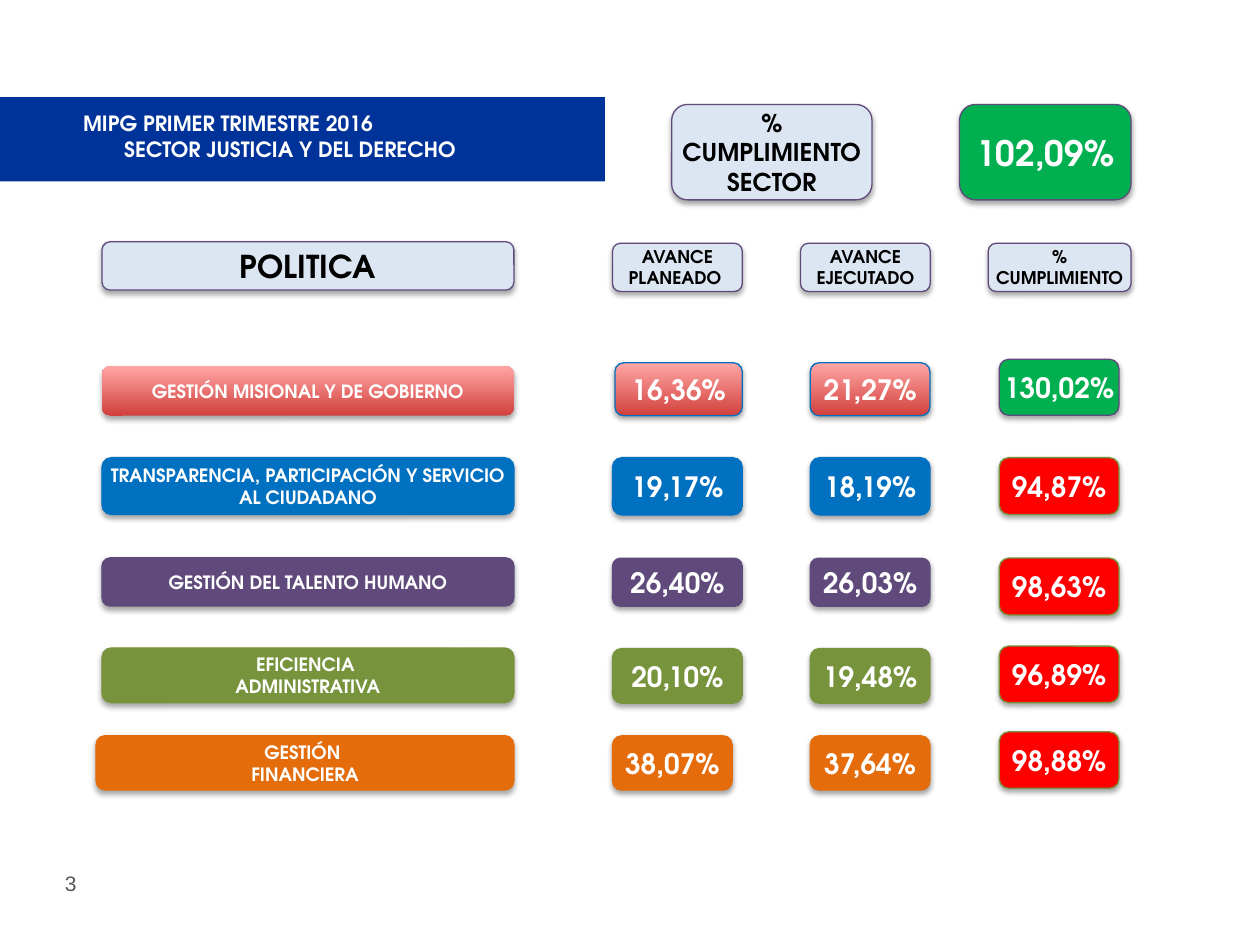
from dataclasses import dataclass
from lxml.etree import SubElement
from pptx import Presentation
from pptx.dml.color import RGBColor
from pptx.enum.shapes import MSO_SHAPE as Shape
from pptx.enum.text import MSO_ANCHOR as Anchor, PP_ALIGN as Align
from pptx.oxml.ns import qn
from pptx.util import Pt


@dataclass(frozen=True)
class Theme:
    font: str = "TeX Gyre Adventor"
    number_font: str = "Arial"
    white: str = "FFFFFF"
    black: str = "000000"
    gray: str = "595959"
    navy: str = "003399"
    pale: str = "DCE6F2"
    blue: str = "0070C0"
    purple: str = "604A7B"
    olive: str = "77933C"
    orange: str = "E46C0A"
    green: str = "00B050"
    red: str = "FF0000"
    coral: tuple = ("D1403C", "FFA6A5")
    total_size: float = 20
    heading_size: float = 18
    value_size: float = 16
    sector_size: float = 14
    title_size: float = 12
    label_size: float = 10.5
    column_size: float = 10


@dataclass(frozen=True)
class Policy:
    label: str
    fill: object
    edge: str
    label_box: tuple
    planned_box: tuple
    executed_box: tuple
    status_box: tuple
    planned: str
    executed: str
    status: str
    status_fill: str
    status_edge: str


THEME = Theme()
LABEL_LEFT, LABEL_WIDTH = 58.3, 235.4
PLANNED_LEFT, PLANNED_WIDTH = 350, 74.2
EXECUTED_LEFT, STATUS_LEFT, VALUE_WIDTH = 463, 571, 68.4


def policy_row(label, fill, edge, label_span, value_span, status_span, values,
               label_side=(LABEL_LEFT, LABEL_WIDTH),
               planned_side=(PLANNED_LEFT, PLANNED_WIDTH),
               status_colors=(THEME.red, THEME.olive)):
    def place(side, span):
        return side[0], span[0], side[1], span[1]

    return Policy(label, fill, edge,
                  place(label_side, label_span),
                  place(planned_side, value_span),
                  place((EXECUTED_LEFT, VALUE_WIDTH), value_span),
                  place((STATUS_LEFT, VALUE_WIDTH), status_span),
                  *values, *status_colors)


POLICIES = [
    policy_row("GESTIÓN MISIONAL Y DE GOBIERNO", THEME.coral, THEME.blue,
               (209.3, 28.3), (207.3, 30.3), (205.3, 32),
               ("16,36%", "21,27%", "130,02%"), planned_side=(351.4, 72.8),
               status_colors=(THEME.green, THEME.purple)),
    policy_row("TRANSPARENCIA, PARTICIPACIÓN Y SERVICIO AL CIUDADANO",
               THEME.blue, THEME.blue, (261.5, 32.5), (261.5, 32.8),
               (261.5, 32.5), ("19,17%", "18,19%", "94,87%")),
    policy_row("GESTIÓN DEL TALENTO HUMANO", THEME.purple, THEME.purple,
               (318.8, 27.5), (319, 27.5), (318.9, 32.5),
               ("26,40%", "26,03%", "98,63%")),
    policy_row("EFICIENCIA \nADMINISTRATIVA", THEME.olive, THEME.olive,
               (370.3, 31.2), (370.6, 31.2), (369.2, 32.3),
               ("20,10%", "19,48%", "96,89%")),
    policy_row("GESTIÓN \nFINANCIERA", THEME.orange, THEME.orange,
               (420.4, 31), (420.5, 31), (418.2, 32.3),
               ("38,07%", "37,64%", "98,88%"), label_side=(54.9, 238.8),
               planned_side=(PLANNED_LEFT, VALUE_WIDTH)),
]


def color(value):
    return RGBColor.from_string(value)


def style_text(frame, size, ink, align, font=THEME.font, bold=True):
    frame.word_wrap = True
    for para in frame.paragraphs:
        para.alignment = align
        for span in para.runs:
            span.font.name = font
            span.font.size = Pt(size)
            span.font.bold = bold
            span.font.color.rgb = color(ink)


def add_shadow(shape):
    shape.shadow.inherit = False
    effects = shape._element.spPr.find(qn("a:effectLst"))
    shadow = SubElement(effects, qn("a:outerShdw"), blurRad=str(Pt(3.1)),
                        dist=str(Pt(1.8)), dir="5400000", rotWithShape="0")
    tint = SubElement(shadow, qn("a:srgbClr"), val=THEME.black)
    SubElement(tint, qn("a:alpha"), val="35000")


def add_card(page, box, text, size, fill, edge=None, ink=THEME.white):
    card = page.shapes.add_shape(Shape.ROUNDED_RECTANGLE, *map(Pt, box))
    add_shadow(card)
    if isinstance(fill, tuple):
        card.fill.gradient()
        card.fill.gradient_angle = 90
        for stop, position, shade in zip(card.fill.gradient_stops, (0, 1), fill):
            stop.position = position
            stop.color.rgb = color(shade)
    else:
        card.fill.solid()
        card.fill.fore_color.rgb = color(fill)
    if edge:
        card.line.color.rgb = color(edge)
        card.line.width = Pt(0.75)
    else:
        card.line.fill.background()
    frame = card.text_frame
    frame.margin_left = frame.margin_right = 0
    frame.margin_top = frame.margin_bottom = 0
    frame.vertical_anchor = Anchor.MIDDLE
    frame.text = text
    style_text(frame, size, ink, Align.CENTER)


def add_banner(page, box):
    left, top, width, height = box
    band = page.shapes.add_shape(Shape.RECTANGLE, *map(Pt, box))
    band.shadow.inherit = False
    band.fill.solid()
    band.fill.fore_color.rgb = color(THEME.navy)
    band.line.fill.background()
    title = page.shapes.add_textbox(Pt(left), Pt(top + 4.3), Pt(width), Pt(34.6))
    frame = title.text_frame
    frame.margin_left = frame.margin_right = 0
    frame.text = "MIPG PRIMER TRIMESTRE 2016\nSECTOR JUSTICIA Y DEL DERECHO"
    style_text(frame, THEME.title_size, THEME.white, Align.LEFT)
    for para, indent in zip(frame.paragraphs, (47.5, 71)):
        para._p.get_or_add_pPr().set("marL", str(Pt(indent)))


def add_sector_summary(page, box):
    left, top, width, height = box
    add_card(page, (left, top, 114.5, height), "% CUMPLIMIENTO SECTOR",
             THEME.sector_size, THEME.pale, THEME.purple, THEME.black)
    add_card(page, (left + width - 98, top, 98, height), "102,09%",
             THEME.total_size, THEME.green, THEME.purple)


def add_column_heads(page, box):
    left, top, width, height = box
    add_card(page, (left, top - 0.8, LABEL_WIDTH, height), "POLITICA",
             THEME.heading_size, THEME.pale, THEME.purple, THEME.black)
    heads = [("AVANCE PLANEADO ", PLANNED_LEFT, PLANNED_WIDTH),
             ("AVANCE EJECUTADO", 457.4, PLANNED_WIDTH),
             ("% CUMPLIMIENTO", 564.7, left + width - 564.7)]
    for text, head_left, head_width in heads:
        add_card(page, (head_left, top, head_width, height), text,
                 THEME.column_size, THEME.pale, THEME.purple, THEME.black)


def add_policy(page, policy):
    label_edge = None if policy.fill == THEME.coral else policy.edge
    add_card(page, policy.label_box, policy.label, THEME.label_size,
             policy.fill, label_edge)
    for box, value, fill, edge in (
            (policy.planned_box, policy.planned, policy.fill, policy.edge),
            (policy.executed_box, policy.executed, policy.fill, policy.edge),
            (policy.status_box, policy.status, policy.status_fill, policy.status_edge)):
        add_card(page, box, value, THEME.value_size, fill, edge)


def add_page_number(page, box):
    number = page.shapes.add_textbox(*map(Pt, box))
    number.text_frame.text = "3"
    style_text(number.text_frame, THEME.title_size, THEME.gray, Align.LEFT,
               THEME.number_font, False)


def main():
    deck = Presentation()
    deck.slide_width, deck.slide_height = Pt(720), Pt(540)
    page = deck.slides.add_slide(deck.slide_layouts[6])
    add_page_number(page, (30, 494, 54, 21.8))
    add_banner(page, (0, 55.5, 345.7, 48.2))
    add_sector_summary(page, (383.8, 59.7, 262.5, 54.5))
    add_column_heads(page, (LABEL_LEFT, 139, 588, 27.6))
    for policy in POLICIES:
        add_policy(page, policy)
    deck.save("out.pptx")


if __name__ == "__main__":
    main()
